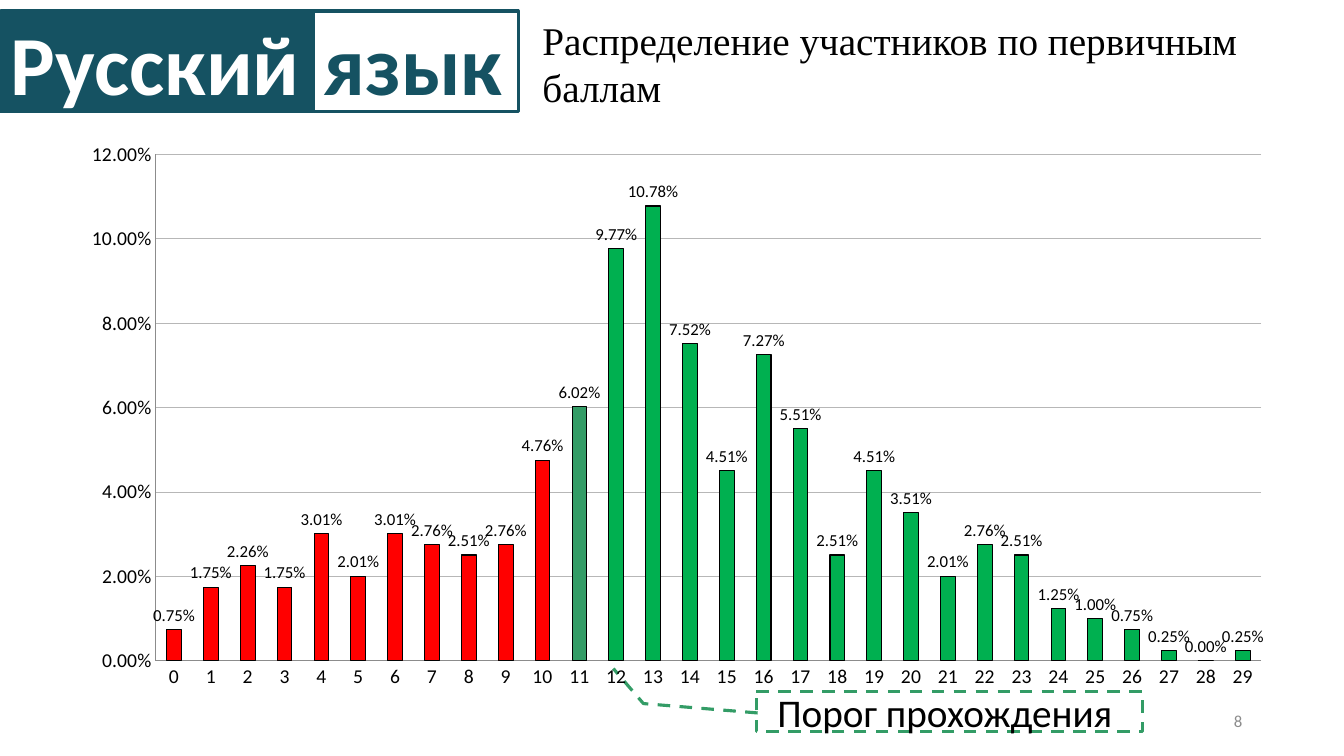
from dataclasses import dataclass
from typing import Optional

from pptx import Presentation
from pptx.chart.data import CategoryChartData
from pptx.dml.color import RGBColor
from pptx.enum.chart import XL_CHART_TYPE, XL_LABEL_POSITION, XL_TICK_MARK
from pptx.enum.dml import MSO_LINE
from pptx.enum.shapes import MSO_SHAPE
from pptx.enum.text import MSO_ANCHOR, MSO_AUTO_SIZE, PP_ALIGN
from pptx.util import Inches, Pt

TEAL = RGBColor(0x15, 0x52, 0x62)
WHITE = RGBColor(0xFF, 0xFF, 0xFF)
BLACK = RGBColor(0, 0, 0)
RED = RGBColor(0xFF, 0, 0)
GREEN = RGBColor(0, 0xB0, 0x50)
MOSS = RGBColor(0x33, 0x9C, 0x66)
GRAY = RGBColor(0x8C, 0x8C, 0x8C)
PALE = RGBColor(0xB7, 0xB7, 0xB7)
SANS = "Calibri"
SERIF = "Times New Roman"
PASS = 11
SHARES = (
    0.0075, 0.0175, 0.0226, 0.0175, 0.0301, 0.0201, 0.0301, 0.0276, 0.0251, 0.0276,
    0.0476, 0.0602, 0.0977, 0.1078, 0.0752, 0.0451, 0.0727, 0.0551, 0.0251, 0.0451,
    0.0351, 0.0201, 0.0276, 0.0251, 0.0125, 0.0100, 0.0075, 0.0025, 0, 0.0025,
)


@dataclass(frozen=True)
class Box:
    text: str
    left: float
    top: float
    width: float
    height: float
    size: int
    ink: RGBColor
    fill: Optional[RGBColor] = None
    edge: RGBColor = TEAL
    kind: MSO_SHAPE = MSO_SHAPE.RECTANGLE
    bold: bool = False
    align: PP_ALIGN = PP_ALIGN.LEFT


TAGS = (
    Box("Русский", 0.01, 0.11, 3.1, 1, 60, WHITE, TEAL, bold=True),
    Box("язык", 3.11, 0.11, 2.03, 1, 60, TEAL, bold=True),
)
NOTE = Box("Порог прохождения ", 7.5, 6.86, 3.83, 0.4, 28, BLACK, WHITE, MOSS,
           MSO_SHAPE.LINE_CALLOUT_2, align=PP_ALIGN.CENTER)
HEAD = Box("Распределение участников по первичным баллам",
           5.28, 0.11, 7.71, 1.04, 28, BLACK)
PAGE = Box("8", 9.42, 6.95, 3, 0.4, 12, GRAY, align=PP_ALIGN.RIGHT)


def place(box: Box) -> tuple:
    return tuple(Inches(n) for n in (box.left, box.top, box.width, box.height))


def style(font, size: int, ink: RGBColor, face: str = SANS, bold: bool = False) -> None:
    font.size = Pt(size)
    font.name = face
    font.bold = bold
    font.color.rgb = ink


def write(shape, box: Box, face: str = SANS) -> None:
    frame = shape.text_frame
    frame.text = box.text
    frame.word_wrap = True
    frame.vertical_anchor = MSO_ANCHOR.MIDDLE
    line = frame.paragraphs[0]
    line.alignment = box.align
    style(line.runs[0].font, box.size, box.ink, face, box.bold)


def draw(slide, box: Box):
    shape = slide.shapes.add_shape(box.kind, *place(box))
    shape.shadow.inherit = False
    if box.fill is None:
        shape.fill.background()
    else:
        shape.fill.solid()
        shape.fill.fore_color.rgb = box.fill
    shape.line.color.rgb = box.edge
    shape.line.width = Pt(2.25)
    write(shape, box)
    return shape


def add_head(slide) -> None:
    head = slide.shapes.title
    head.left, head.top, head.width, head.height = place(HEAD)
    write(head, HEAD, SERIF)
    head.text_frame.vertical_anchor = MSO_ANCHOR.TOP
    head.text_frame.auto_size = MSO_AUTO_SIZE.SHAPE_TO_FIT_TEXT


def add_note(slide) -> None:
    note = draw(slide, NOTE)
    note.line.dash_style = MSO_LINE.DASH
    for i, bend in enumerate((0.534, 0.004, 0.302, -0.292, -0.568, -0.37)):
        note.adjustments[i] = bend


def add_bars(slide) -> None:
    data = CategoryChartData(number_format="0.00%")
    data.categories = [str(n) for n in range(len(SHARES))]
    data.add_series("Series 1", SHARES)
    chart = slide.shapes.add_chart(
        XL_CHART_TYPE.COLUMN_CLUSTERED,
        Inches(0.67), Inches(1.3), Inches(12.08), Inches(5.65), data).chart
    style(chart.font, 10, BLACK)
    chart.has_legend = False
    chart.has_title = False

    for axis in (chart.category_axis, chart.value_axis):
        axis.major_tick_mark = axis.minor_tick_mark = XL_TICK_MARK.NONE
        axis.format.line.color.rgb = GRAY
        style(axis.tick_labels.font, 14, BLACK)
    scale = chart.value_axis
    scale.minimum_scale, scale.maximum_scale, scale.major_unit = 0, 0.12, 0.02
    scale.tick_labels.number_format = "0.00%"
    scale.tick_labels.number_format_is_linked = False
    scale.major_gridlines.format.line.color.rgb = PALE
    scale.major_gridlines.format.line.width = Pt(0.75)

    plot = chart.plots[0]
    plot.gap_width = 150
    plot.vary_by_categories = False
    bars = plot.series[0]
    paint(bars.format, GREEN)
    for n in range(PASS + 1):
        paint(bars.points[n].format, MOSS if n == PASS else RED)
    tips = bars.data_labels
    tips.show_value = True
    tips.position = XL_LABEL_POSITION.OUTSIDE_END
    tips.number_format = "0.00%"
    tips.number_format_is_linked = False
    style(tips.font, 12, BLACK)


def paint(form, hue: RGBColor) -> None:
    form.fill.solid()
    form.fill.fore_color.rgb = hue
    form.line.color.rgb = BLACK
    form.line.width = Pt(0.75)


def main() -> None:
    deck = Presentation()
    deck.slide_width = Inches(13.33)
    deck.slide_height = Inches(7.5)
    slide = deck.slides.add_slide(deck.slide_layouts[5])
    for tag in TAGS:
        draw(slide, tag)
    add_head(slide)
    add_note(slide)
    write(slide.shapes.add_textbox(*place(PAGE)), PAGE)
    add_bars(slide)
    deck.save("out.pptx")


if __name__ == "__main__":
    main()
